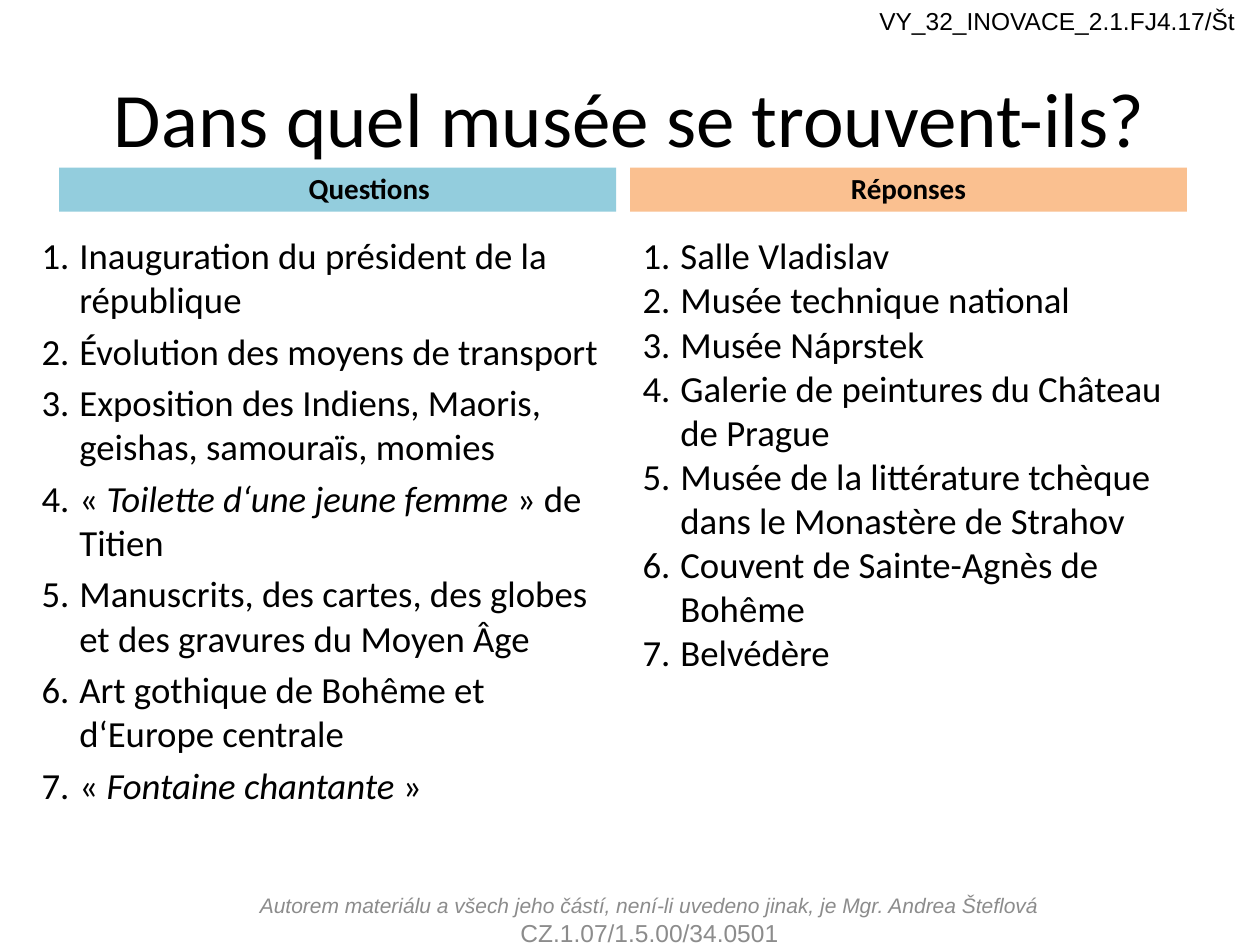
from pptx import Presentation
from pptx.dml.color import RGBColor
from pptx.enum.text import MSO_ANCHOR, MSO_AUTO_SIZE, PP_ALIGN
from pptx.oxml.xmlchemy import OxmlElement
from pptx.util import Inches, Pt

BLACK = RGBColor(0x00, 0x00, 0x00)
GREY = RGBColor(0x8C, 0x8C, 0x8C)
BLUE = RGBColor(0x93, 0xCD, 0xDD)
ORANGE = RGBColor(0xFA, 0xC0, 0x90)

TITLE = "Dans quel musée se trouvent-ils?"
CODE = "VY_32_INOVACE_2.1.FJ4.17/Št"
AUTHOR = "Autorem materiálu a všech jeho částí, není-li uvedeno jinak, je Mgr. Andrea Šteflová"
PROJECT = "CZ.1.07/1.5.00/34.0501"

# Each item is a list of (text, italic) runs.
QUESTIONS = [
    [("Inauguration du président de la république", False)],
    [("Évolution des moyens de transport", False)],
    [("Exposition des Indiens, Maoris, geishas, samouraïs, momies", False)],
    [("« ", False), ("Toilette d‘une jeune femme ", True), ("» de Titien", False)],
    [("Manuscrits, des cartes, des globes et des gravures du Moyen Âge", False)],
    [("Art gothique de Bohême et d‘Europe centrale", False)],
    [("« ", False), ("Fontaine chantante ", True), ("»", False)],
]
ANSWERS = [
    [("Salle Vladislav", False)],
    [("Musée technique national", False)],
    [("Musée Náprstek", False)],
    [("Galerie de peintures du Château de Prague", False)],
    [("Musée de la littérature tchèque dans le Monastère de Strahov", False)],
    [("Couvent de Sainte-Agnès de Bohême", False)],
    [("Belvédère", False)],
]
# heading, colour, heading left, level, margin, indent, items, list left, list width, gap in points
COLUMNS = [
    ("Questions", BLUE, 0.47, 1, 0.79, -0.29, QUESTIONS, 0.23, 4.77, 4.2),
    ("Réponses", ORANGE, 5, 0, 0, 0, ANSWERS, 5, 4.61, 0),
]
HEADING_TOP, HEADING_WIDTH, HEADING_HEIGHT = 1.33, 4.42, 0.35
LIST_TOP, LIST_HEIGHT, LIST_INDENT = 1.8, 5.23, 0.3


def place(shape, left, top, width, height, anchor):
    shape.left, shape.top = Inches(left), Inches(top)
    shape.width, shape.height = Inches(width), Inches(height)
    frame = shape.text_frame
    frame.word_wrap = True
    frame.auto_size = MSO_AUTO_SIZE.NONE
    frame.vertical_anchor = anchor
    return frame


def add_run(paragraph, text, size, font="Calibri", color=BLACK, bold=False, italic=False):
    run = paragraph.add_run()
    run.text = text
    run.font.name = font
    run.font.size = Pt(size)
    run.font.color.rgb = color
    run.font.bold = bold
    run.font.italic = italic


def set_indent(paragraph, margin, indent):
    properties = paragraph._p.get_or_add_pPr()
    properties.set("marL", str(Inches(margin)))
    properties.set("indent", str(Inches(indent)))
    return properties


def fill_numbered(frame, items, gap):
    for position, item in enumerate(items):
        paragraph = frame.add_paragraph() if position else frame.paragraphs[0]
        paragraph.space_before = Pt(gap)
        numbering = OxmlElement("a:buAutoNum")
        numbering.set("type", "arabicPeriod")
        set_indent(paragraph, LIST_INDENT, -LIST_INDENT).append(numbering)
        for text, italic in item:
            add_run(paragraph, text, 21, italic=italic)


presentation = Presentation()
presentation.slide_width, presentation.slide_height = Inches(10), Inches(7.5)
comparison_layout = presentation.slide_layouts[4]
slide = presentation.slides.add_slide(comparison_layout)
title, *bodies = slide.placeholders

title_line = place(title, 0.5, 0.3, 9, 1.25, MSO_ANCHOR.MIDDLE).paragraphs[0]
title_line.alignment = PP_ALIGN.CENTER
add_run(title_line, TITLE, 44)

for column, heading, answers in zip(COLUMNS, bodies[::2], bodies[1::2]):
    label, color, left, level, margin, indent, items, list_left, list_width, gap = column
    heading.fill.solid()
    heading.fill.fore_color.rgb = color
    heading_line = place(heading, left, HEADING_TOP, HEADING_WIDTH, HEADING_HEIGHT,
                         MSO_ANCHOR.BOTTOM).paragraphs[0]
    heading_line.level = level
    heading_line.alignment = PP_ALIGN.CENTER
    set_indent(heading_line, margin, indent)
    add_run(heading_line, label, 16.6, bold=True)

    list_frame = place(answers, list_left, LIST_TOP, list_width, LIST_HEIGHT, MSO_ANCHOR.TOP)
    fill_numbered(list_frame, items, gap)

credit = slide.shapes.add_textbox(0, 0, 0, 0)
credit_frame = place(credit, 1.95, 7.1, 6.41, 0.4, MSO_ANCHOR.MIDDLE)
author_line, project_line = credit_frame.paragraphs[0], credit_frame.add_paragraph()
author_line.alignment = project_line.alignment = PP_ALIGN.CENTER
add_run(author_line, AUTHOR, 12, "Arial", GREY, italic=True)
add_run(project_line, PROJECT, 14, "Arial", GREY)

code = slide.shapes.add_textbox(0, 0, 0, 0)
code_frame = place(code, 6.88, 0, 3.12, 0.34, MSO_ANCHOR.TOP)
add_run(code_frame.paragraphs[0], CODE, 14, "Arial")

presentation.save("out.pptx")
